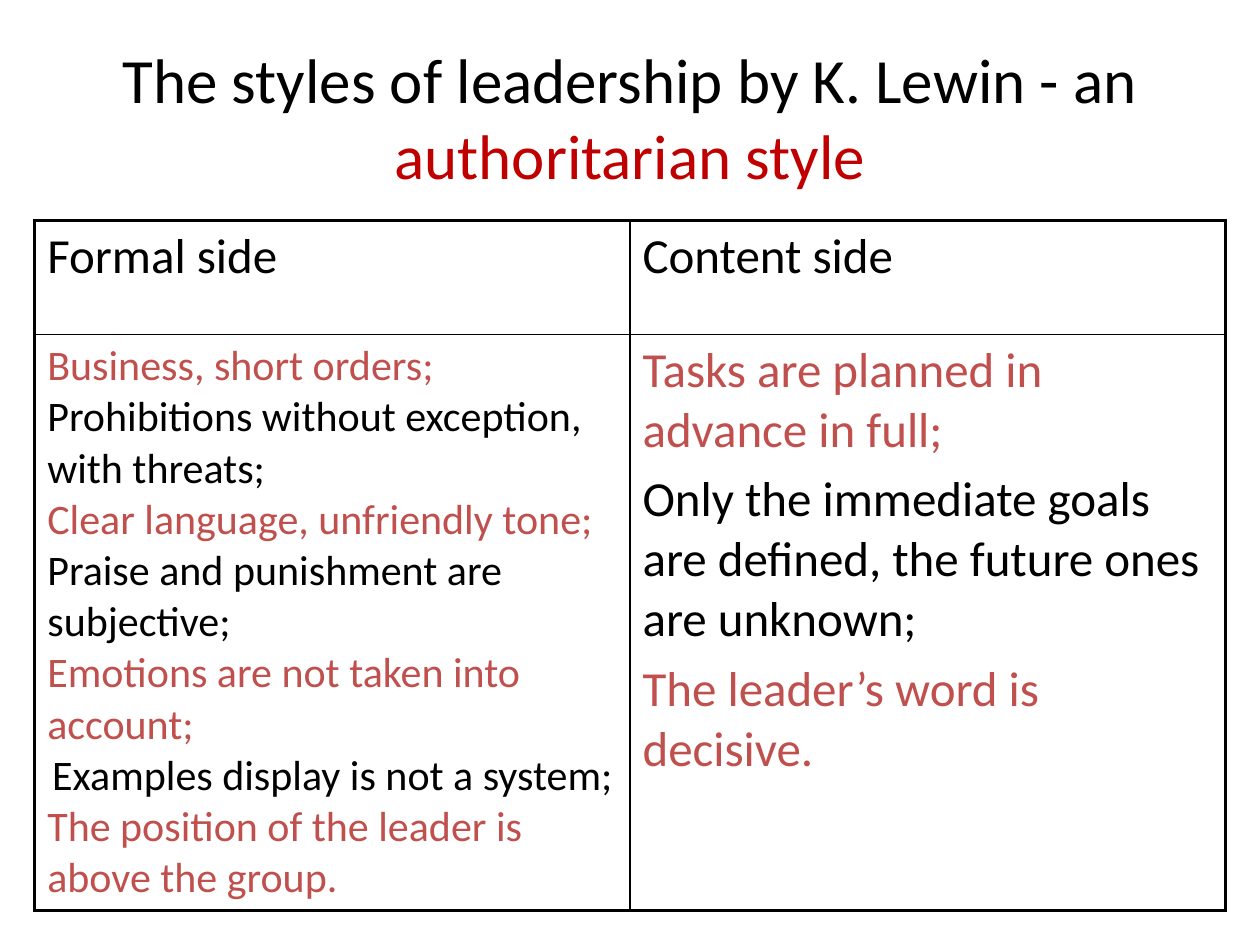
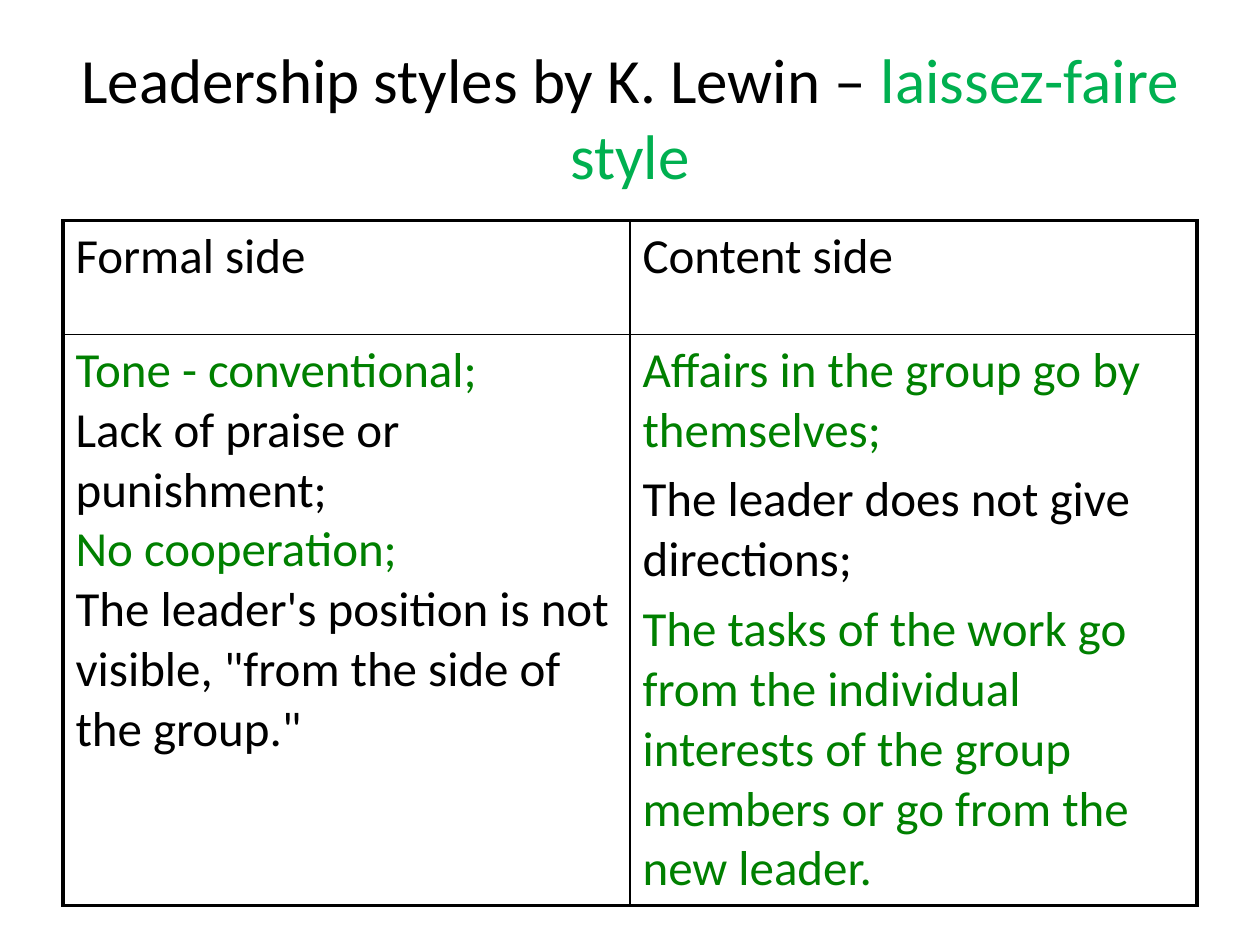
from lxml import etree
from pptx import Presentation
from pptx import util as u
from pptx.dml.color import RGBColor
from pptx.enum import text
from pptx.oxml import ns

HUES = {
    "ink": "000000", "paper": "FFFFFF", "red": "C00000",
    "brick": "C0504D", "lime": "00B050", "green": "008000",
}
FACE = "Calibri"
THICK, THIN = 2.25, 1
TOP, HEAD = 4.45, 2.29  # table top and header row height, cm
SIDES = ("Formal side", "Content side")


def hue(name):
    return RGBColor.from_string(HUES[name])


def style(font, size, tint):
    for key, val in {"name": FACE, "size": u.Pt(size), "bold": False}.items():
        setattr(font, key, val)
    font.color.rgb = hue(tint)


def title(slide, lead, term, tint):
    box = slide.shapes.title
    place = {"left": 1.27, "top": 0.76, "width": 22.86, "height": 3.18}
    for key, val in place.items():
        setattr(box, key, u.Cm(val))
    frame = box.text_frame
    form = {"word_wrap": True, "auto_size": text.MSO_AUTO_SIZE.NONE,
            "vertical_anchor": text.MSO_ANCHOR.MIDDLE}
    for key, val in form.items():
        setattr(frame, key, val)
    para = frame.paragraphs[0]
    para.alignment = text.PP_ALIGN.CENTER
    for words, shade in ((lead, "ink"), (term, tint)):
        run = para.add_run()
        run.text = words
        style(run.font, 36, shade)


def border(cell, row, col):
    """Thick lines round the table, thin lines inside it."""
    props = cell._tc.get_or_add_tcPr()
    outer = {"lnL": col == 0, "lnR": col == 1, "lnT": row == 0, "lnB": row == 1}
    for tag, edge in outer.items():
        line = etree.SubElement(props, ns.qn("a:" + tag))
        line.set("w", str(u.Pt(THICK if edge else THIN)))
        fill = etree.SubElement(line, ns.qn("a:solidFill"))
        etree.SubElement(fill, ns.qn("a:srgbClr")).set("val", HUES["ink"])


def write(cell, lines, size, tints, gap=0, mid=None):
    """Fill a cell, with the tints taken in turn; line number mid is centred."""
    frame = cell.text_frame
    for i, words in enumerate(lines):
        para = frame.add_paragraph() if i else frame.paragraphs[0]
        para.alignment = text.PP_ALIGN.CENTER if i == mid else text.PP_ALIGN.LEFT
        para.space_before = u.Pt(gap if i else 0)
        run = para.add_run()
        run.text = words
        style(run.font, size, tints[i % len(tints)])


def table(slide, left, wide, tall, formal, content, tint, size, mid=None):
    grid = slide.shapes.add_table(
        2, 2, u.Cm(left), u.Cm(TOP), u.Cm(wide), u.Cm(HEAD + tall)).table
    grid.first_row = grid.horz_banding = False
    for row, high in zip(grid.rows, (HEAD, tall)):
        row.height = u.Cm(high)
    for row in range(2):
        for col in range(2):
            cell = grid.cell(row, col)
            border(cell, row, col)
            cell.fill.solid()
            cell.fill.fore_color.rgb = hue("paper")
    for col, side in enumerate(SIDES):
        write(grid.cell(0, col), [side], 28, ["ink"])
    tints = (tint, "ink")
    write(grid.cell(1, 0), formal, size, tints, mid=mid)
    write(grid.cell(1, 1), content, 28, tints, gap=5.6)


def main():
    deck = Presentation()
    deck.slide_width, deck.slide_height = u.Cm(25.4), u.Cm(19.05)
    plain = deck.slide_layouts[5]

    # Authoritarian style
    slide = deck.slides.add_slide(plain)
    title(slide, "The styles of leadership by K. Lewin - an ",
          "authoritarian style", "red")
    formal = [
        "Business, short orders;",
        "Prohibitions without exception, with threats;",
        "Clear language, unfriendly tone;",
        "Praise and punishment are subjective;",
        "Emotions are not taken into account;",
        "Examples display is not a system;",
        "The position of the leader is above the group.",
    ]
    content = [
        "Tasks are planned in advance in full;",
        "Only the immediate goals are defined, the future ones are unknown;",
        "The leader’s word is decisive.",
    ]
    table(slide, 0.7, 24, 11.6, formal, content, "brick", 24, mid=5)

    # Laissez-faire style
    slide = deck.slides.add_slide(plain)
    title(slide, "Leadership styles by K. Lewin – ", "laissez-faire style", "lime")
    formal = [
        "Tone - conventional;",
        "Lack of praise or punishment;",
        "No cooperation;",
        "The leader's position is not visible, \"from the side of the group.\"",
    ]
    content = [
        "Affairs in the group go by themselves;",
        "The leader does not give directions;",
        "The tasks of the work go from the individual interests of the group "
        "members or go from the new leader.",
    ]
    table(slide, 1.27, 22.86, 11.5, formal, content, "green", 28)

    deck.save("out.pptx")


if __name__ == "__main__":
    main()
